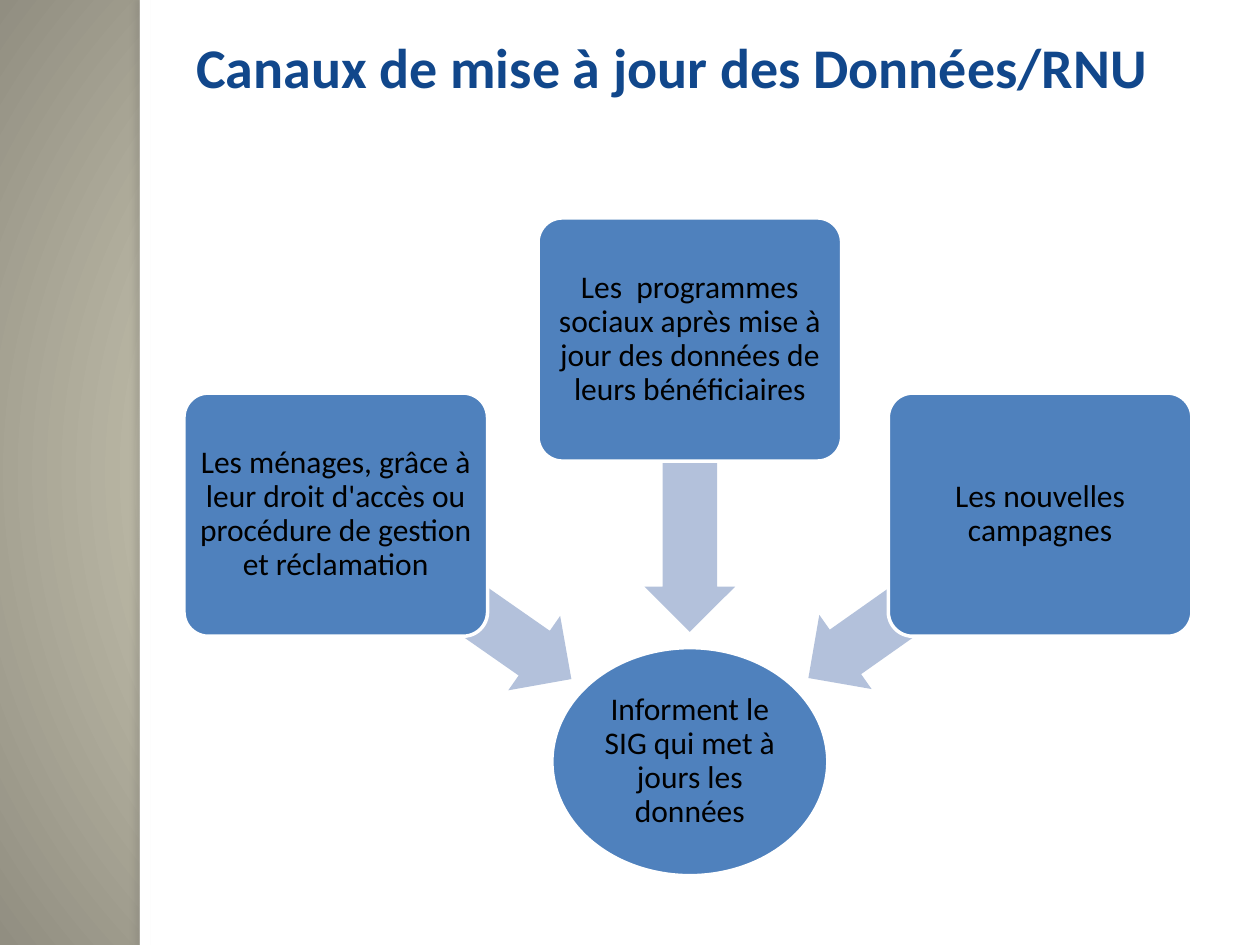
from dataclasses import dataclass
from math import atan2, cos, degrees, radians, sin

from lxml.etree import SubElement
from pptx import Presentation
from pptx.dml.color import RGBColor
from pptx.enum.shapes import MSO_SHAPE as Shape
from pptx.enum.text import MSO_ANCHOR as Anchor, PP_ALIGN as Align
from pptx.oxml import parse_xml
from pptx.oxml.ns import nsdecls, qn
from pptx.util import Inches, Pt


@dataclass(frozen=True)
class Theme:
    font: str = "Calibri"
    title_size: int = 32
    body_size: int = 18
    title: str = "11478B"
    text: str = "000000"
    node: str = "4F81BD"
    arrow: str = "B3C1DB"
    paper: str = "FFFFFF"
    glow: str = "FCF7DD"
    edge: str = "918E81"
    shadow: str = "77756F"


THEME = Theme()
WIDTH, HEIGHT = 10, 7.5
MARGIN = WIDTH / 9
STRIP = 0.08
SOURCE_SIZE = (2.41, 1.93)
HUB_SIZE = (2.19, 1.81)
ARROW_THICKNESS = 0.72

TITLE = "Canaux de mise à jour des Données/RNU"
HUB = ("Informent le SIG qui met à jours les données", (5.475, 6.045))
# Text, centre of the box, length of the arrow towards the hub
SOURCES = [
    ("Les ménages, grâce à leur droit d'accès ou procédure de gestion et réclamation",
     (2.665, 4.085), 2.28),
    ("Les  programmes sociaux après mise à jour des données de leurs bénéficiaires",
     (5.475, 2.695), 2.32),
    ("Les nouvelles campagnes", (8.255, 4.085), 2.25),
]


def color(value):
    return RGBColor.from_string(value)


def add_block(slide, kind, center, size, fill):
    (x, y), (w, h) = center, size
    block = slide.shapes.add_shape(
        kind, Inches(x - w / 2), Inches(y - h / 2), Inches(w), Inches(h))
    block.shadow.inherit = False
    block.fill.solid()
    block.fill.fore_color.rgb = color(fill)
    block.line.fill.background()
    return block


def set_text(frame, text, size, ink, bold=False):
    frame.text = text
    frame.word_wrap = True
    paragraph = frame.paragraphs[0]
    paragraph.alignment = Align.CENTER
    font = paragraph.font
    font.name, font.size, font.bold = THEME.font, Pt(size), bold
    font.color.rgb = color(ink)
    return paragraph


def add_node(slide, kind, text, center, size, inset):
    node = add_block(slide, kind, center, size, THEME.node)
    node.line.color.rgb = color(THEME.paper)
    node.line.width = Pt(2)
    frame = node.text_frame
    frame.vertical_anchor = Anchor.MIDDLE
    frame.margin_left = frame.margin_right = Inches(inset)
    frame.margin_top = frame.margin_bottom = Inches(inset)
    set_text(frame, text, THEME.body_size, THEME.text).line_spacing = 0.9
    return node


def add_arrow(slide, start, target, length):
    """Arrow of the given length that leaves start in the direction of target."""
    angle = atan2(target[1] - start[1], target[0] - start[0])
    center = (start[0] + length / 2 * cos(angle), start[1] + length / 2 * sin(angle))
    arrow = add_block(slide, Shape.LEFT_ARROW, center,
                      (length, ARROW_THICKNESS), THEME.arrow)
    arrow.adjustments[0], arrow.adjustments[1] = 0.6, 0.5
    arrow.rotation = degrees(angle) + 180


def set_background(slide):
    """Circular gradient spreading from the middle of the slide."""
    fill = slide.background.fill
    fill.gradient()
    for stop, position, value in zip(fill.gradient_stops, (0, 1), (THEME.glow, THEME.edge)):
        stop.position = position
        stop.color.rgb = color(value)
    gradient = slide.background._cSld.bg.bgPr.find(qn("a:gradFill"))
    gradient.remove(gradient.find(qn("a:lin")))
    circle = SubElement(gradient, qn("a:path"), path="circle")
    SubElement(circle, qn("a:fillToRect"),
               {side: "50000" for side in ("l", "t", "r", "b")})


def add_panel(slide):
    add_block(slide, Shape.RECTANGLE, ((MARGIN + WIDTH) / 2, HEIGHT / 2),
              (WIDTH - MARGIN, HEIGHT), THEME.paper)
    strip = add_block(slide, Shape.RECTANGLE, (MARGIN + STRIP / 2, HEIGHT / 2),
                      (STRIP, HEIGHT), THEME.paper)
    effects = strip._element.spPr.find(qn("a:effectLst"))
    effects.append(parse_xml(
        f'<a:outerShdw {nsdecls("a")} blurRad="{Pt(3)}" dist="{Pt(3)}" dir="{180 * 60000}">'
        f'<a:srgbClr val="{THEME.shadow}"><a:alpha val="25000"/></a:srgbClr></a:outerShdw>'))


def add_title(slide):
    title = slide.shapes.title
    title.left, title.top = Inches(0.75), Inches(0.21)
    title.width, title.height = Inches(9.17), Inches(1.72)
    title.text_frame.vertical_anchor = Anchor.TOP
    set_text(title.text_frame, TITLE, THEME.title_size, THEME.title, bold=True)
    # Bring the title in front of the panel
    slide.shapes._spTree.append(title._element)


def main():
    deck = Presentation()
    deck.slide_width, deck.slide_height = Inches(WIDTH), Inches(HEIGHT)
    slide = deck.slides.add_slide(deck.slide_layouts[5])
    set_background(slide)
    add_panel(slide)

    hub_text, hub_center = HUB
    add_node(slide, Shape.OVAL, hub_text, hub_center, HUB_SIZE, 0.01)
    for text, center, reach in SOURCES:
        add_arrow(slide, center, hub_center, reach)
        box = add_node(slide, Shape.ROUNDED_RECTANGLE, text, center, SOURCE_SIZE, 0.04)
        box.adjustments[0] = 0.1
    add_title(slide)
    deck.save("out.pptx")


if __name__ == "__main__":
    main()
